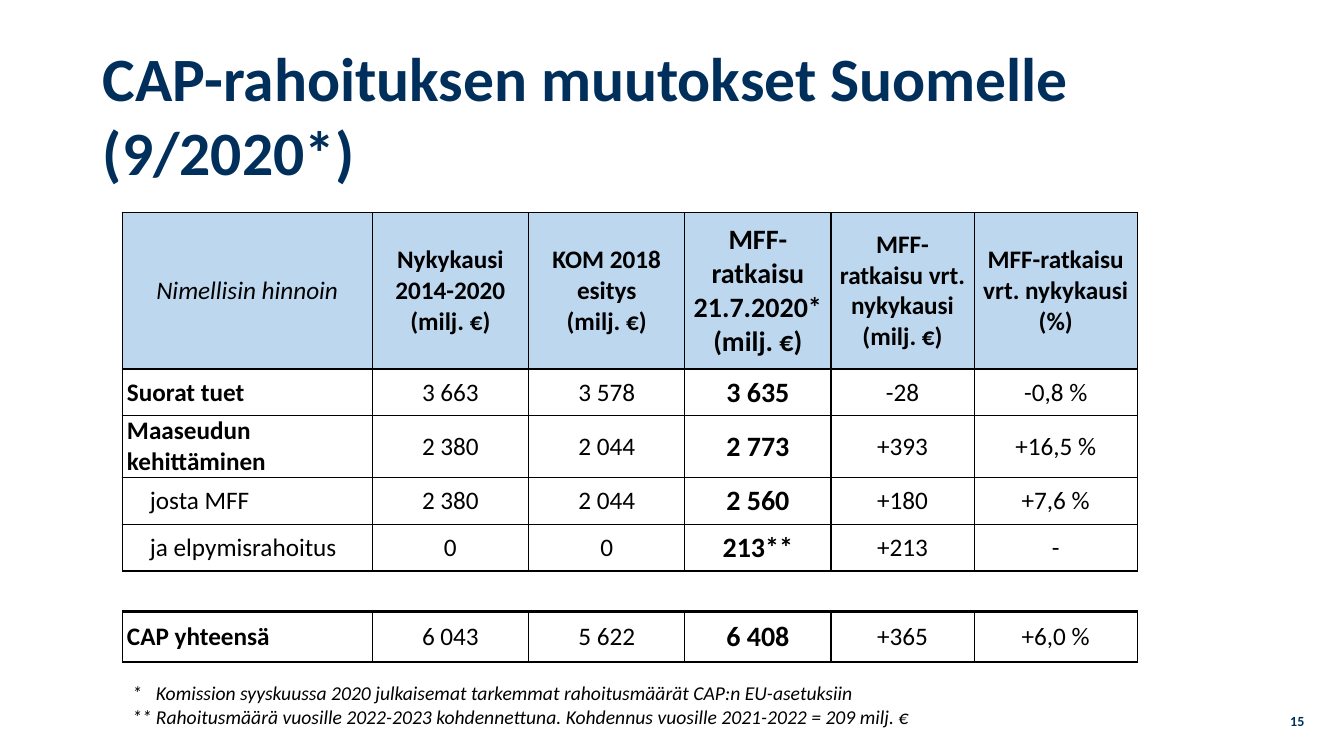
from lxml import etree
from pptx import Presentation
from pptx import util as u
from pptx.dml.color import RGBColor
from pptx.enum import text
from pptx.oxml import ns

NAVY = RGBColor(0x00, 0x2F, 0x5B)
BLACK = RGBColor(0x00, 0x00, 0x00)
HEADER_BLUE = RGBColor(0xBD, 0xD7, 0xEE)
MIDDLE = text.MSO_ANCHOR.MIDDLE
ALIGN = text.PP_ALIGN

COLUMN_WIDTHS = [6.3, 3.94, 3.94, 3.68, 3.61, 4.11]
ROW_HEIGHTS = [3.94, 1.18, 1.55, 1.18, 1.18, 1.02, 1.27]
ROWS = [
    ["Nimellisin hinnoin", "Nykykausi 2014-2020 (milj. €)", "KOM 2018 esitys\n(milj. €)",
     "MFF-ratkaisu 21.7.2020* (milj. €)", "MFF-ratkaisu vrt. nykykausi (milj. €)",
     "MFF-ratkaisu vrt. nykykausi (%)"],
    ["Suorat tuet", "3 663", "3 578", "3 635", "-28", "-0,8 %"],
    ["Maaseudun kehittäminen", "2 380", "2 044", "2 773", "+393", "+16,5 %"],
    ["josta MFF", "2 380", "2 044", "2 560", "+180", "+7,6 %"],
    ["ja elpymisrahoitus", "0", "0", "213**", "+213", "-"],
    [""] * 6,
    ["CAP yhteensä", "6 043", "5 622", "6 408", "+365", "+6,0 %"],
]
GAP_ROW, TOTAL_ROW = 5, 6
INDENTED_ROWS = (3, 4)
DECISION_COLUMN = 3
FOOTNOTES = [
    "*\tKomission syyskuussa 2020 julkaisemat tarkemmat rahoitusmäärät CAP:n EU-asetuksiin",
    "**\tRahoitusmäärä vuosille 2022-2023 kohdennettuna. "
    "Kohdennus vuosille 2021-2022 = 209 milj. €",
]


def format_text(paragraph, size, color=BLACK, bold=False, italic=False, align=ALIGN.LEFT):
    paragraph.alignment = align
    paragraph.font.color.rgb = color
    values = {"name": "Calibri", "size": u.Pt(size), "bold": bold, "italic": italic}
    for name, value in values.items():
        setattr(paragraph.font, name, value)


def add_border(cell, side, width):
    """Draw one cell edge (L, R, T or B); a width of 0 hides it."""
    properties = cell._tc.get_or_add_tcPr()
    line = etree.SubElement(properties, ns.qn(f"a:ln{side}"), w=str(u.Pt(width)))
    if width:
        fill = etree.SubElement(line, ns.qn("a:solidFill"))
        etree.SubElement(fill, ns.qn("a:srgbClr"), val=str(BLACK))
    else:
        etree.SubElement(line, ns.qn("a:noFill"))


presentation = Presentation()
presentation.slide_width = u.Cm(33.87)
presentation.slide_height = u.Cm(19.05)
slide = presentation.slides.add_slide(presentation.slide_layouts[5])

title = slide.shapes.title
title.left, title.top, title.width, title.height = u.Cm(2.34), u.Cm(1.02), u.Cm(27.03), u.Cm(3.68)
title.text_frame.text = "CAP-rahoituksen muutokset Suomelle (9/2020*)"
title.text_frame.vertical_anchor = MIDDLE
title.text_frame.auto_size = text.MSO_AUTO_SIZE.NONE
title.text_frame.paragraphs[0].line_spacing = 1.0
format_text(title.text_frame.paragraphs[0], 44, NAVY, bold=True)

number_box = slide.shapes.add_textbox(u.Cm(25.5), u.Cm(17.65), u.Cm(7.62), u.Cm(1.02))
number_box.text_frame.word_wrap = True
number_box.text_frame.vertical_anchor = MIDDLE
number_box.text_frame.text = "15"
format_text(number_box.text_frame.paragraphs[0], 10, NAVY, bold=True, align=ALIGN.RIGHT)

table = slide.shapes.add_table(
    len(ROWS), len(COLUMN_WIDTHS), u.Cm(3.08), u.Cm(5.36),
    u.Cm(sum(COLUMN_WIDTHS)), u.Cm(sum(ROW_HEIGHTS))).table
table.first_row = False
table.horz_banding = False
for column, width in zip(table.columns, COLUMN_WIDTHS):
    column.width = u.Cm(width)
for row, height in zip(table.rows, ROW_HEIGHTS):
    row.height = u.Cm(height)

for r, values in enumerate(ROWS):
    for c, value in enumerate(values):
        cell = table.cell(r, c)
        is_header, is_label = r == 0, c == 0
        is_indented = is_label and r in INDENTED_ROWS
        widths = {"L": 0 if r == GAP_ROW else 1, "R": 0 if r == GAP_ROW else 1,
                  "T": 2.25 if r == TOTAL_ROW else 1, "B": 2.25 if r == GAP_ROW else 1}
        for side, width in widths.items():
            add_border(cell, side, width)
        if is_header:
            cell.fill.solid()
            cell.fill.fore_color.rgb = HEADER_BLUE
        else:
            cell.fill.background()
        cell.vertical_anchor = MIDDLE
        cell.margin_left = u.Cm(0.7 if is_indented else 0.12)
        cell.margin_right = u.Cm(0.12)
        cell.margin_top = cell.margin_bottom = 0
        cell.text_frame.text = value
        for paragraph in cell.text_frame.paragraphs:
            format_text(
                paragraph, 20 if c == DECISION_COLUMN else 18,
                bold=c == DECISION_COLUMN or is_header != is_label and not is_indented,
                italic=is_header and is_label,
                align=ALIGN.LEFT if is_label and not is_header else ALIGN.CENTER)

footnote_box = slide.shapes.add_textbox(u.Cm(3.08), u.Cm(17.04), u.Cm(23.5), u.Cm(1.45))
footnote_box.text_frame.word_wrap = True
footnote_box.text_frame.text = "\n".join(FOOTNOTES)
for paragraph in footnote_box.text_frame.paragraphs:
    properties = paragraph._p.get_or_add_pPr()
    properties.set("marL", str(u.Cm(0.6)))
    properties.set("indent", str(u.Cm(-0.6)))
    format_text(paragraph, 14, italic=True)

presentation.save("out.pptx")
